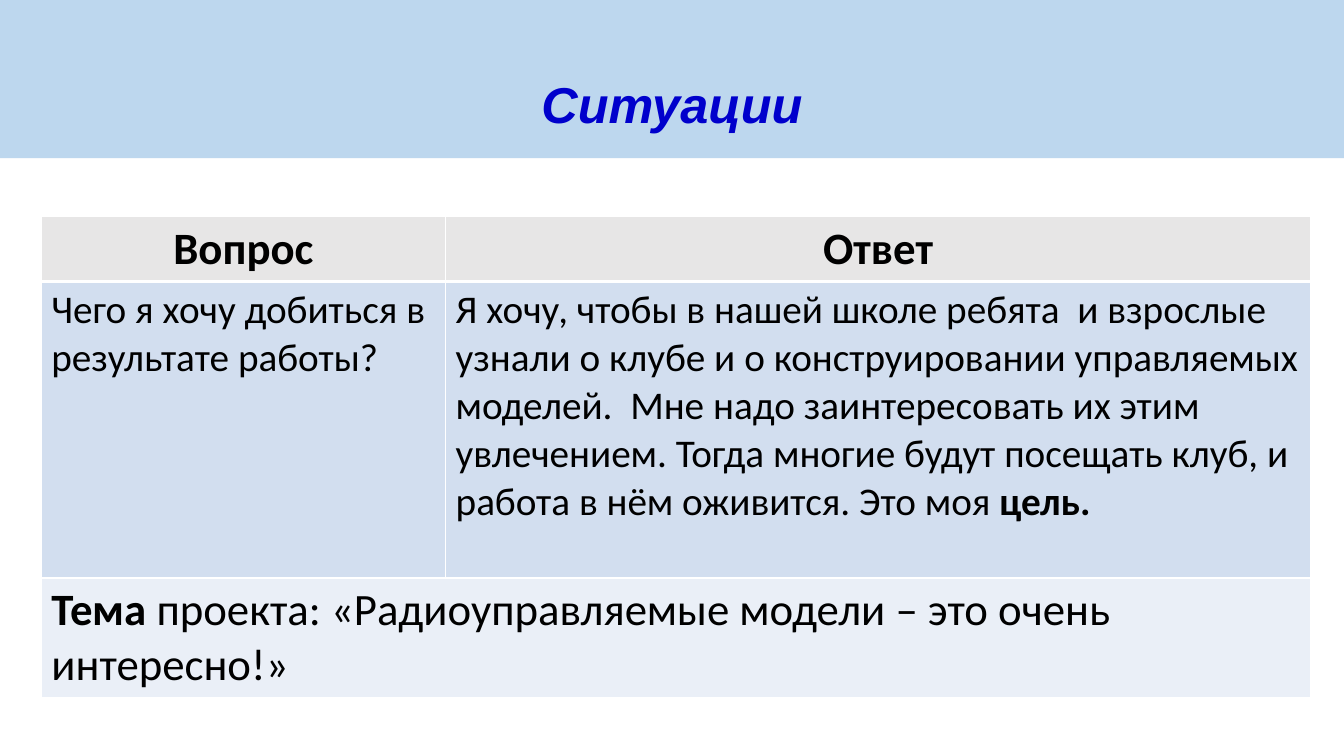
"""Build the slide with the project question, its answer and the project theme."""
from dataclasses import dataclass

from lxml import etree
from pptx import Presentation
from pptx.dml.color import RGBColor
from pptx.enum.shapes import MSO_SHAPE
from pptx.enum.text import MSO_ANCHOR, PP_ALIGN
from pptx.oxml.ns import qn
from pptx.slide import Slide
from pptx.table import Table, _Cell
from pptx.text.text import TextFrame
from pptx.util import Inches, Pt

RECTANGLE = MSO_SHAPE.RECTANGLE
TOP = MSO_ANCHOR.TOP
LEFT, CENTER = PP_ALIGN.LEFT, PP_ALIGN.CENTER

BLACK = RGBColor(0x00, 0x00, 0x00)
WHITE = RGBColor(0xFF, 0xFF, 0xFF)
TITLE_BLUE = RGBColor(0x00, 0x00, 0xCC)
BAND_BLUE = RGBColor(0xBD, 0xD7, 0xEE)
HEADER_GRAY = RGBColor(0xE7, 0xE6, 0xE6)
ANSWER_BLUE = RGBColor(0xD2, 0xDE, 0xEF)
THEME_BLUE = RGBColor(0xEA, 0xEF, 0xF7)

SLIDE_WIDTH, SLIDE_HEIGHT = 13.33, 7.5
COLUMN_WIDTHS = (4.01, 8.58)
ROW_HEIGHTS = (0.59, 2.94, 1.18)


@dataclass(frozen=True)
class Phrase:
    text: str
    bold: bool = False


@dataclass(frozen=True)
class Entry:
    row: int
    column: int
    phrases: tuple[Phrase, ...]
    size: int
    fill: RGBColor
    align: PP_ALIGN = LEFT
    bottom_border: int = 1


ENTRIES = (
    Entry(0, 0, (Phrase("Вопрос", True),), 32, HEADER_GRAY, CENTER, 3),
    Entry(0, 1, (Phrase("Ответ", True),), 32, HEADER_GRAY, CENTER, 3),
    Entry(1, 0, (Phrase("Чего я хочу добиться в результате работы?"),), 28, ANSWER_BLUE),
    Entry(1, 1, (
        Phrase("Я хочу, чтобы в нашей школе ребята  и взрослые узнали о клубе "
               "и о конструировании управляемых моделей.  Мне надо заинтересовать "
               "их этим увлечением. Тогда многие будут посещать клуб, и работа "
               "в нём оживится. Это моя "),
        Phrase("цель.", True),
    ), 28, ANSWER_BLUE),
    Entry(2, 0, (
        Phrase("Тема", True),
        Phrase(" проекта: «Радиоуправляемые модели – это очень интересно!»"),
    ), 32, THEME_BLUE),
)


def write(frame: TextFrame, phrases: tuple[Phrase, ...], *, size: int,
          font: str = "Calibri", color: RGBColor = BLACK,
          italic: bool = False, align: PP_ALIGN = LEFT) -> None:
    frame.word_wrap = True
    paragraph = frame.paragraphs[0]
    paragraph.alignment = align
    for phrase in phrases:
        run = paragraph.add_run()
        run.text = phrase.text
        run.font.name = font
        run.font.size = Pt(size)
        run.font.bold = phrase.bold
        run.font.italic = italic
        run.font.color.rgb = color


def add_borders(cell: _Cell, bottom: int) -> None:
    properties = cell._tc.get_or_add_tcPr()
    for side, points in (("L", 1), ("R", 1), ("T", 1), ("B", bottom)):
        border = etree.SubElement(properties, qn(f"a:ln{side}"), w=str(Pt(points)))
        fill = etree.SubElement(border, qn("a:solidFill"))
        etree.SubElement(fill, qn("a:srgbClr"), val=str(WHITE))


def add_title(slide: Slide) -> None:
    band = slide.shapes.add_shape(RECTANGLE, 0, 0, Inches(SLIDE_WIDTH), Inches(1.57))
    band.shadow.inherit = False
    band.fill.solid()
    band.fill.fore_color.rgb = BAND_BLUE
    band.line.fill.background()
    band.text_frame.vertical_anchor = TOP
    band.text_frame.margin_top = Inches(0.73)
    write(band.text_frame, (Phrase("Ситуации", True),), size=36, font="Arial",
          color=TITLE_BLUE, italic=True, align=CENTER)


def fill_entry(table: Table, entry: Entry) -> None:
    cell = table.cell(entry.row, entry.column)
    add_borders(cell, entry.bottom_border)
    cell.fill.solid()
    cell.fill.fore_color.rgb = entry.fill
    write(cell.text_frame, entry.phrases, size=entry.size, align=entry.align)


def add_answers(slide: Slide) -> None:
    table = slide.shapes.add_table(
        len(ROW_HEIGHTS), len(COLUMN_WIDTHS), Inches(0.41), Inches(2.15),
        Inches(sum(COLUMN_WIDTHS)), Inches(sum(ROW_HEIGHTS))).table
    for column, width in zip(table.columns, COLUMN_WIDTHS):
        column.width = Inches(width)
    for row, height in zip(table.rows, ROW_HEIGHTS):
        row.height = Inches(height)
    table.cell(2, 0).merge(table.cell(2, 1))
    for entry in ENTRIES:
        fill_entry(table, entry)


def main() -> None:
    presentation = Presentation()
    presentation.slide_width = Inches(SLIDE_WIDTH)
    presentation.slide_height = Inches(SLIDE_HEIGHT)
    slide = presentation.slides.add_slide(presentation.slide_layouts[6])
    add_title(slide)
    add_answers(slide)
    presentation.save("out.pptx")


if __name__ == "__main__":
    main()
